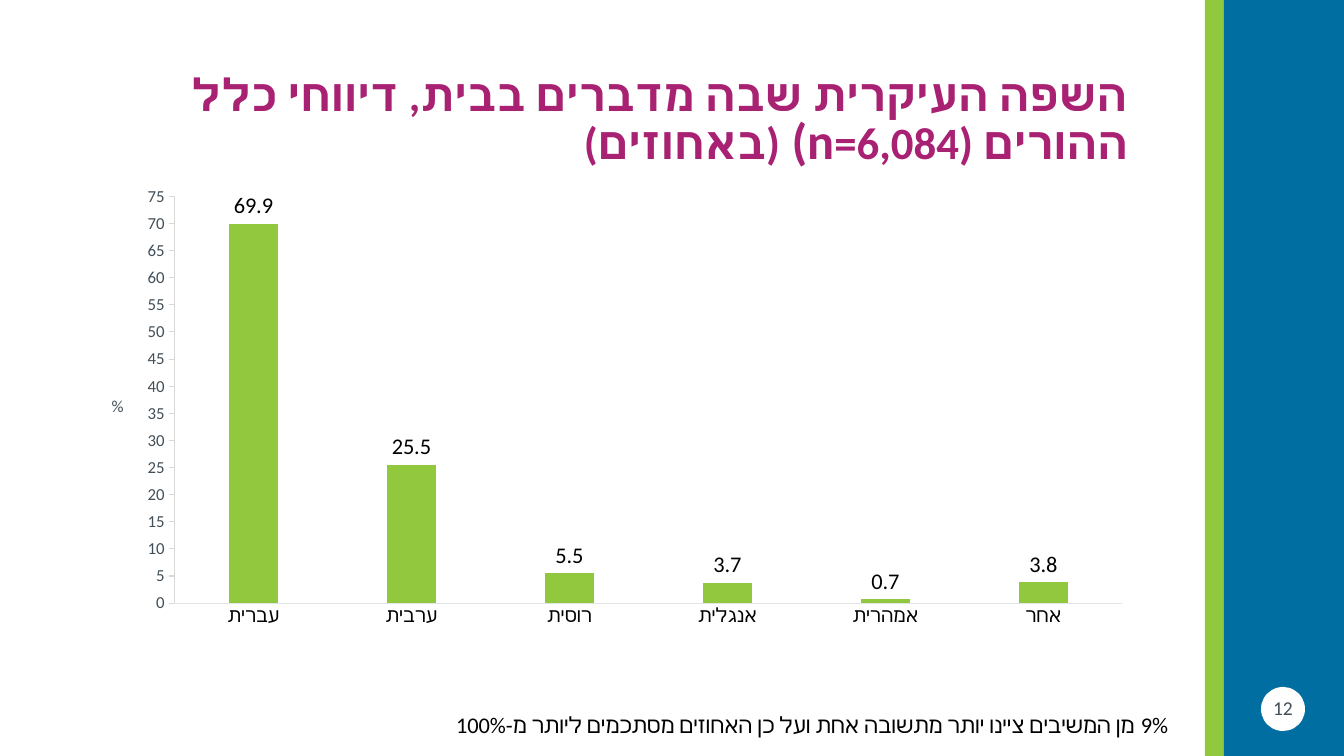
from lxml import etree
from pptx import Presentation
from pptx.chart.data import CategoryChartData
from pptx.dml.color import RGBColor
from pptx.enum.chart import XL_CHART_TYPE, XL_LABEL_POSITION, XL_TICK_MARK
from pptx.enum.shapes import MSO_SHAPE
from pptx.enum.text import MSO_ANCHOR, PP_ALIGN
from pptx.oxml import parse_xml
from pptx.oxml.ns import nsdecls, qn
from pptx.util import Emu, Pt

FONT = "Calibri"
WHITE = RGBColor(0xFF, 0xFF, 0xFF)
BLACK = RGBColor(0, 0, 0)
GREEN = RGBColor(0x92, 0xC8, 0x3E)
BLUE = RGBColor(0x00, 0x6E, 0xA0)
SLATE = RGBColor(0x42, 0x4F, 0x58)
PURPLE = RGBColor(0xA8, 0x21, 0x72)
CATEGORY_LINE = RGBColor(0xE0, 0xE5, 0xE8)
VALUE_LINE = RGBColor(0xD9, 0xD9, 0xD9)

LANGUAGES = {"עברית": 69.9, "ערבית": 25.5, "רוסית": 5.5,
             "אנגלית": 3.7, "אמהרית": 0.7, "אחר": 3.8}
PLOT_LAYOUT = {"layoutTarget": "inner", "xMode": "edge", "yMode": "edge",
               "x": 0.07, "y": 0.03, "w": 0.915, "h": 0.844}


def px(length):
    return Emu(round(length * 914400 / 100.8))


def place(box):
    return [px(length) for length in box]


def style_font(font, size, color, bold=False):
    font.name = FONT
    font.size = Pt(size)
    font.color.rgb = color
    font.bold = bold


def write_rtl(paragraph, pieces, color, align, bold=False):
    """Fill a right-to-left paragraph with (text, size) pieces."""
    paragraph.alignment = align
    paragraph._p.get_or_add_pPr().set("rtl", "1")
    for text, size in pieces:
        run = paragraph.add_run()
        run.text = text
        style_font(run.font, size, color, bold)
        complex_script = etree.SubElement(run._r.get_or_add_rPr(), qn("a:cs"))
        complex_script.set("typeface", FONT)


def add_text(slide, box, text, size, color, align):
    frame = slide.shapes.add_textbox(*place(box)).text_frame
    frame.word_wrap = True
    write_rtl(frame.paragraphs[0], [(text, size)], color, align)


def add_sidebar(slide, box):
    left, top, width, height = box
    stripe = 20
    badge = 44
    badge_left, badge_top = left + 56, top + height - 69
    parts = [
        (MSO_SHAPE.RECTANGLE, (left, top, stripe, height), GREEN),
        (MSO_SHAPE.RECTANGLE, (left + stripe - 1, top, width - stripe + 1, height), BLUE),
        (MSO_SHAPE.OVAL, (badge_left, badge_top, badge, badge), WHITE),
    ]
    for preset, part_box, color in parts:
        part = slide.shapes.add_shape(preset, *place(part_box))
        part.shadow.inherit = False
        part.fill.solid()
        part.fill.fore_color.rgb = color
        part.line.fill.background()
    # Page number
    add_text(slide, (badge_left - 7, badge_top + 4, 58, 40), "12", 14, SLATE, PP_ALIGN.CENTER)


def add_title(slide, box):
    title = slide.shapes.title
    title.left, title.top, title.width, title.height = place(box)
    frame = title.text_frame
    frame.word_wrap = True
    frame.vertical_anchor = MSO_ANCHOR.MIDDLE
    paragraph = frame.paragraphs[0]
    paragraph.line_spacing = 0.8
    pieces = [("השפה העיקרית שבה מדברים בבית, דיווחי כלל ההורים (6,084=", 32),
              ("n) ", 36), ("(באחוזים)", 32)]
    write_rtl(paragraph, pieces, PURPLE, PP_ALIGN.RIGHT, bold=True)


def set_plot_layout(chart):
    plot_area = chart._chartSpace.chart.plotArea
    for layout in plot_area.findall(qn("c:layout")):
        plot_area.remove(layout)
    settings = "".join(f'<c:{key} val="{value}"/>' for key, value in PLOT_LAYOUT.items())
    plot_area.insert(0, parse_xml(
        f'<c:layout {nsdecls("c")}><c:manualLayout>{settings}</c:manualLayout></c:layout>'))


def style_axis(axis, tick, size, color, line_color):
    axis.has_major_gridlines = False
    axis.major_tick_mark = tick
    axis.minor_tick_mark = XL_TICK_MARK.NONE
    style_font(axis.tick_labels.font, size, color)
    axis.format.line.color.rgb = line_color
    axis.format.line.width = Pt(0.75)


def add_language_chart(slide, box):
    data = CategoryChartData()
    data.categories = list(LANGUAGES)
    data.add_series("Series 1", list(LANGUAGES.values()))
    chart = slide.shapes.add_chart(XL_CHART_TYPE.COLUMN_CLUSTERED, *place(box), data).chart
    chart.has_legend = False
    chart.has_title = False
    style_font(chart.font, 10, SLATE)
    set_plot_layout(chart)

    # Axes
    style_axis(chart.category_axis, XL_TICK_MARK.NONE, 14, BLACK, CATEGORY_LINE)
    percent_axis = chart.value_axis
    style_axis(percent_axis, XL_TICK_MARK.OUTSIDE, 12, SLATE, VALUE_LINE)
    percent_axis.minimum_scale = 0
    percent_axis.maximum_scale = 75
    percent_axis.major_unit = 5
    percent_title = percent_axis.axis_title.text_frame
    percent_title.text = "%"
    percent_title._txBody.bodyPr.set("rot", "0")
    style_font(percent_title.paragraphs[0].runs[0].font, 12, SLATE)

    # Columns and their values
    columns = chart.plots[0]
    columns.vary_by_categories = False
    columns.gap_width = 219
    columns.overlap = -27
    share = columns.series[0]
    share.format.fill.solid()
    share.format.fill.fore_color.rgb = GREEN
    labels = share.data_labels
    labels.show_value = True
    labels.position = XL_LABEL_POSITION.OUTSIDE_END
    style_font(labels.font, 16, BLACK)


def main():
    deck = Presentation()
    deck.slide_width, deck.slide_height = px(1344), px(756)
    slide = deck.slides.add_slide(deck.slide_layouts[5])
    add_sidebar(slide, (1205, 0, 139, 756))
    add_title(slide, (146, 50, 992, 146))
    add_language_chart(slide, (102, 182, 1036, 482))
    # Footnote
    add_text(slide, (308, 706, 870, 37),
             "9% מן המשיבים ציינו יותר מתשובה אחת ועל כן האחוזים מסתכמים ליותר מ-100%",
             16, BLACK, PP_ALIGN.RIGHT)
    deck.save("out.pptx")


if __name__ == "__main__":
    main()
